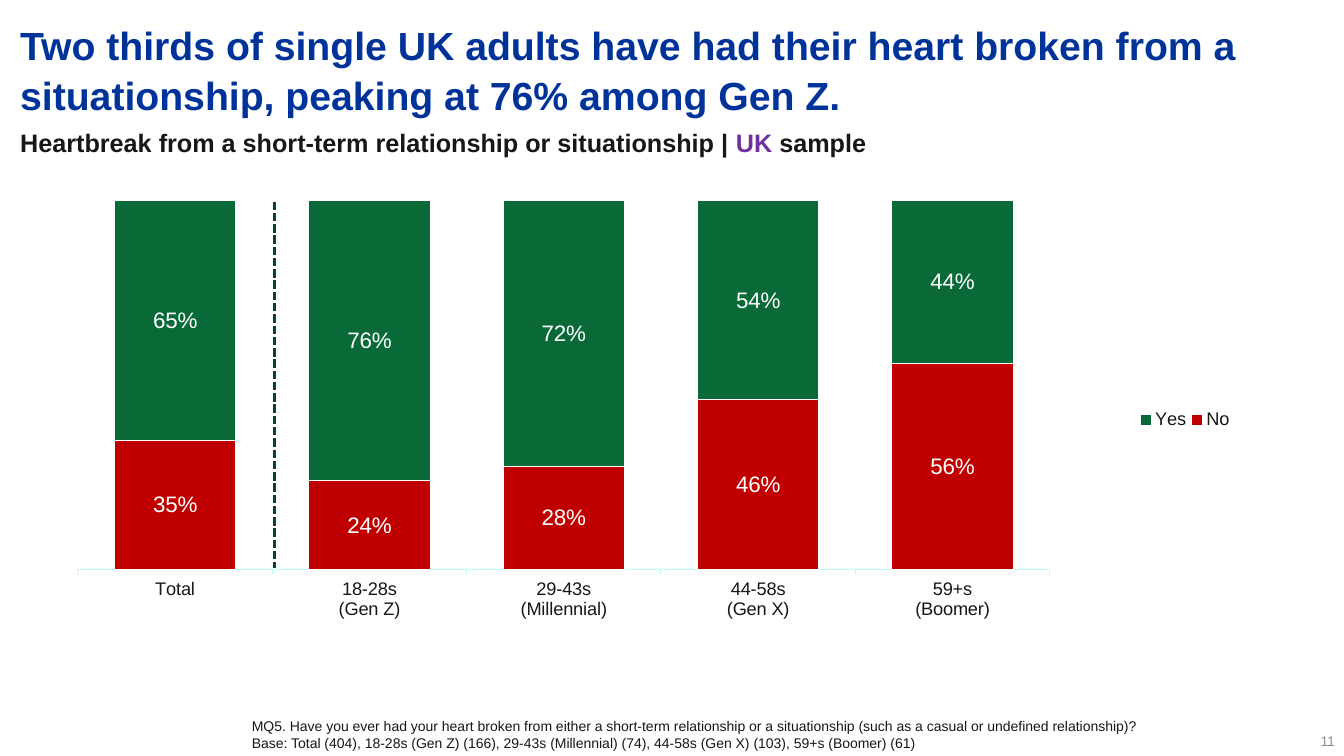
from lxml import etree
from pptx import Presentation
from pptx.chart.data import CategoryChartData
from pptx.dml.color import RGBColor
from pptx.enum.chart import XL_CHART_TYPE, XL_LEGEND_POSITION, XL_TICK_LABEL_POSITION, XL_TICK_MARK
from pptx.enum.dml import MSO_LINE
from pptx.enum.shapes import MSO_CONNECTOR
from pptx.enum.text import MSO_ANCHOR, PP_ALIGN
from pptx.oxml import parse_xml
from pptx.oxml.ns import nsdecls, qn
from pptx.util import Inches, Pt

COLORS = {"title": "003399", "text": "181717", "accent": "7030A0", "page": "8C9491",
          "axis": "BEFEF1", "divider": "014537", "white": "FFFFFF", "no": "C00000", "yes": "096A37"}
FONT = "Arial"

TITLE = [[("Two thirds of single UK adults have had their heart broken from a situationship, "
           "peaking at 76% among Gen Z.", "title")]]
SUBTITLE = [[("Heartbreak from a short-term relationship or situationship | ", "text"),
             ("UK", "accent"), (" sample", "text")]]
FOOTNOTE = [[("MQ5. Have you ever had your heart broken from either a short-term relationship or a "
              "situationship (such as a casual or undefined relationship)?", "text")],
            [("Base: Total (404), 18-28s (Gen Z) (166), 29-43s (Millennial) (74), "
              "44-58s (Gen X) (103), 59+s (Boomer) (61)", "text")]]
PAGE_NUMBER = [[("11", "page")]]

GROUPS = ["Total", "18-28s\n(Gen Z)", "29-43s\n(Millennial)", "44-58s\n(Gen X)", "59+s\n(Boomer)"]
YES_SHARES = [0.65, 0.76, 0.72, 0.54, 0.44]
SERIES = [("No", [round(1 - share, 2) for share in YES_SHARES], "no"),
          ("Yes", YES_SHARES, "yes")]

CHART_BOX = (0.45, 1.6, 12.42, 5.24)
PLOT_SHARES = (0.026, 0.075, 0.776, 0.698)
LEGEND_SHARES = (0.87, 0.46, 0.08, 0.06)
DIVIDER = (2.72, 2, 2.72, 5.64)


def color(name):
    return RGBColor.from_string(COLORS[name])


def style_font(font, size, name, bold=False):
    font.name, font.size, font.bold = FONT, Pt(size), bold
    font.color.rgb = color(name)


def write_text(box, place, paragraphs, size, bold=False, inset=(0, 0),
               anchor=MSO_ANCHOR.TOP, align=PP_ALIGN.LEFT, spacing=None):
    box.left, box.top, box.width, box.height = map(Inches, place)
    frame = box.text_frame
    frame.word_wrap = True
    frame.vertical_anchor = anchor
    frame.margin_left = frame.margin_right = Inches(inset[0])
    frame.margin_top = frame.margin_bottom = Inches(inset[1])
    for index, runs in enumerate(paragraphs):
        para = frame.add_paragraph() if index else frame.paragraphs[0]
        para.alignment = align
        para.line_spacing = spacing
        for text, name in runs:
            span = para.add_run()
            span.text = text
            style_font(span.font, size, name, bold)


def layout_xml(shares, inner=False):
    """Build a manual chart layout from shares of the chart's size."""
    target = '<c:layoutTarget val="inner"/>' if inner else ""
    modes = '<c:xMode val="edge"/><c:yMode val="edge"/>'
    places = "".join(f'<c:{key} val="{share}"/>' for key, share in zip("xywh", shares))
    return parse_xml(f'<c:layout {nsdecls("c")}><c:manualLayout>{target}{modes}{places}'
                     '</c:manualLayout></c:layout>')


def add_heartbreak_chart(page):
    data = CategoryChartData(number_format="0%")
    data.categories = GROUPS
    for name, shares, _ in SERIES:
        data.add_series(name, shares)
    chart = page.shapes.add_chart(XL_CHART_TYPE.COLUMN_STACKED_100,
                                  *map(Inches, CHART_BOX), data).chart
    chart.has_title = False
    style_font(chart.font, 10, "divider")

    plot = chart.plots[0]
    plot.gap_width, plot.overlap, plot.vary_by_categories = 60, 100, False
    for series, (_, _, fill) in zip(plot.series, SERIES):
        series.format.fill.solid()
        series.format.fill.fore_color.rgb = color(fill)
        series.format.line.color.rgb = color("white")
        series.format.line.width = Pt(0.75)
        labels = series.data_labels
        labels.show_value = True
        labels.number_format, labels.number_format_is_linked = "0%", False
        style_font(labels.font, 16, "white")

    groups_axis = chart.category_axis
    groups_axis.major_tick_mark = XL_TICK_MARK.OUTSIDE
    groups_axis.tick_label_position = XL_TICK_LABEL_POSITION.LOW
    groups_axis.format.line.color.rgb = color("axis")
    groups_axis.format.line.width = Pt(0.75)
    style_font(groups_axis.tick_labels.font, 13, "text")
    share_axis = chart.value_axis
    share_axis.minimum_scale, share_axis.maximum_scale, share_axis.major_unit = 0, 1, 0.2
    share_axis.has_major_gridlines = False
    share_axis.visible = False

    chart.has_legend = True
    legend = chart.legend
    legend.position = XL_LEGEND_POSITION.RIGHT
    legend.include_in_layout = False
    style_font(legend.font, 13, "text")

    plot_area = chart._chartSpace.find(".//" + qn("c:plotArea"))
    for old in plot_area.findall(qn("c:layout")):
        plot_area.remove(old)
    plot_area.insert(0, layout_xml(PLOT_SHARES, inner=True))
    legend_xml = chart._chartSpace.find(".//" + qn("c:legend"))
    for old in legend_xml.findall(qn("c:layout")):
        legend_xml.remove(old)
    legend_xml.find(qn("c:legendPos")).addnext(layout_xml(LEGEND_SHARES))


def add_divider(page):
    line = page.shapes.add_connector(MSO_CONNECTOR.STRAIGHT, *map(Inches, DIVIDER))
    line.line.color.rgb = color("divider")
    line.line.width = Pt(2)
    line.line.dash_style = MSO_LINE.SQUARE_DOT
    etree.SubElement(line._element.spPr, qn("a:effectLst"))


def main():
    deck = Presentation()
    deck.slide_width, deck.slide_height = Inches(13.33), Inches(7.5)
    page = deck.slides.add_slide(deck.slide_layouts[5])

    def new_box():
        return page.shapes.add_textbox(0, 0, 0, 0)

    add_heartbreak_chart(page)
    write_text(page.shapes.title, (0.2, 0.19, 12.86, 0.36), TITLE, 28, bold=True, spacing=1.05)
    write_text(new_box(), (0.2, 1.26, 12.57, 0.37), SUBTITLE, 18, bold=True)
    write_text(new_box(), (2.4, 7.07, 10.47, 0.44), FOOTNOTE, 10, inset=(0.1, 0.05))
    write_text(new_box(), (12.65, 7.19, 0.59, 0.24), PAGE_NUMBER, 10,
               anchor=MSO_ANCHOR.BOTTOM, align=PP_ALIGN.RIGHT)
    add_divider(page)
    deck.save("out.pptx")


if __name__ == "__main__":
    main()
